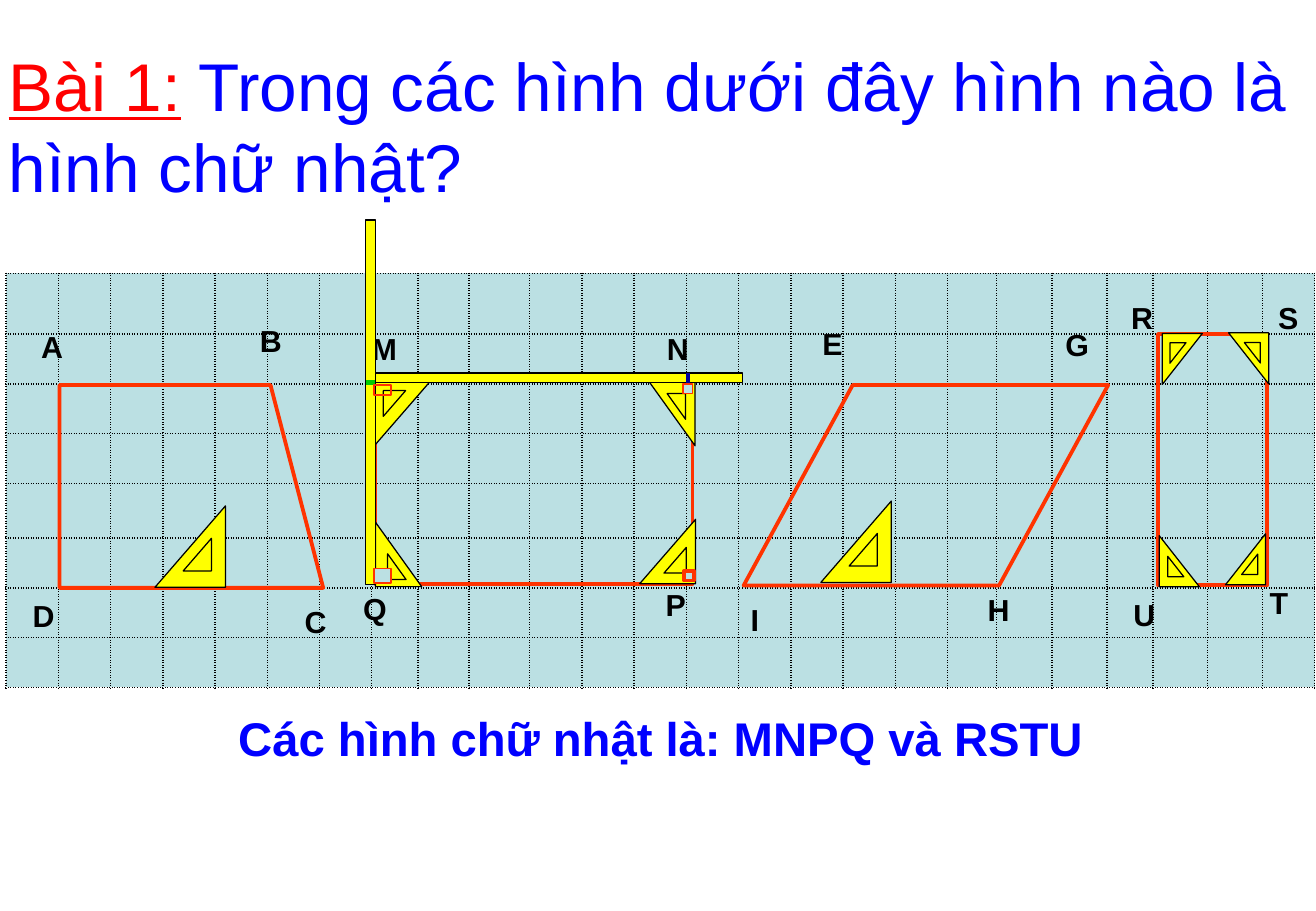
import dataclasses
import itertools

import pptx
import pptx.dml.color
import pptx.enum.shapes
import pptx.enum.text
import pptx.oxml
import pptx.oxml.ns
import pptx.util

Inches = pptx.util.Inches
Shape = pptx.enum.shapes.MSO_SHAPE
Align = pptx.enum.text.PP_ALIGN
Anchor = pptx.enum.text.MSO_ANCHOR
AutoSize = pptx.enum.text.MSO_AUTO_SIZE


@dataclasses.dataclass(frozen=True)
class Theme:
    font: str = "Arial"
    grid: str = "BBE0E3"
    outline: str = "FF3300"
    tool: str = "FFFF00"
    ink: str = "000000"
    question: str = "0000FF"
    exercise: str = "FF0000"
    tick: str = "000099"
    origin: str = "00CC00"
    title_size: int = 40
    answer_size: int = 28
    label_size: int = 18
    hairline: float = 0.75
    thin: float = 1
    bold_line: float = 2.25


def rgb(color):
    return pptx.dml.color.RGBColor.from_string(color)


def apply_format(target, values):
    for name, value in values.items():
        setattr(target, name, value)


class GeometrySlide:
    def __init__(self, presentation, theme):
        self.theme = theme
        self.slide = presentation.slides.add_slide(presentation.slide_layouts[5])
        self.shapes = self.slide.shapes

    def fill_text(self, frame, runs, size, align=Align.LEFT, **frame_format):
        apply_format(frame, {"word_wrap": True, **frame_format})
        paragraph = frame.paragraphs[0]
        paragraph.alignment = align
        for text, color, font_format in runs:
            run = paragraph.add_run()
            run.text = text
            apply_format(run.font, {"name": self.theme.font, "size": pptx.util.Pt(size),
                                    **font_format})
            run.font.color.rgb = rgb(color)

    def title(self, box, runs):
        title = self.shapes.title
        apply_format(title, dict(zip(("left", "top", "width", "height"), map(Inches, box))))
        self.fill_text(title.text_frame, runs, self.theme.title_size,
                       vertical_anchor=Anchor.MIDDLE, auto_size=AutoSize.NONE)

    def text(self, box, text, color, size, align=Align.LEFT, **frame_format):
        frame = self.shapes.add_textbox(*map(Inches, box)).text_frame
        self.fill_text(frame, [(text, color, {"bold": True})], size, align, **frame_format)

    def shape(self, kind, box, fill=None, line=None, width=None, rotation=0):
        shape = self.shapes.add_shape(kind, *map(Inches, box))
        shape.rotation = rotation
        shape.shadow.inherit = False
        if fill:
            shape.fill.solid()
            shape.fill.fore_color.rgb = rgb(fill)
        else:
            shape.fill.background()
        shape.line.color.rgb = rgb(line or self.theme.outline)
        shape.line.width = pptx.util.Pt(width or self.theme.bold_line)
        return shape

    def tool(self, kind, box, rotation=0):
        self.shape(kind, box, self.theme.tool, self.theme.ink, self.theme.hairline, rotation)

    def set_square(self, left, top, width, height, rotation, hole_left, hole_top):
        """A drafting triangle whose inner triangle is 0.4 of its size."""
        for box in ((left, top, width, height),
                    (hole_left, hole_top, 0.4 * width, 0.4 * height)):
            self.tool(Shape.RIGHT_TRIANGLE, box, rotation)

    def line(self, start, end, color, width):
        line = self.shapes.add_connector(
            pptx.enum.shapes.MSO_CONNECTOR.STRAIGHT, *map(Inches, (*start, *end)))
        line.line.color.rgb = rgb(color)
        line.line.width = pptx.util.Pt(width)
        line._element.spPr.append(pptx.oxml.parse_xml(
            f'<a:effectLst {pptx.oxml.ns.nsdecls("a")}/>'))

    def grid(self, left, top, columns, rows):
        table = self.shapes.add_table(
            len(rows), len(columns),
            *map(Inches, (left, top, sum(columns), sum(rows)))).table
        apply_format(table, {"first_row": False, "horz_banding": False})
        for column, width in zip(table.columns, columns):
            column.width = Inches(width)
        for row, height in zip(table.rows, rows):
            row.height = Inches(height)
        for cell in table.iter_cells():
            for side in "LRTB":
                cell._tc.get_or_add_tcPr().append(pptx.oxml.parse_xml(
                    f'<a:ln{side} {pptx.oxml.ns.nsdecls("a")} w="12700"><a:solidFill>'
                    f'<a:srgbClr val="{self.theme.ink}"/></a:solidFill>'
                    f'<a:prstDash val="sysDot"/></a:ln{side}>'))
            cell.fill.solid()
            cell.fill.fore_color.rgb = rgb(self.theme.grid)


def main():
    presentation = pptx.Presentation()
    apply_format(presentation, {"slide_width": Inches(10.83), "slide_height": Inches(7.5)})
    theme = Theme()
    page = GeometrySlide(presentation, theme)

    # Question
    page.title((-0.03, 0.44, 10.83, 1.17), [
        ("Bài 1:", theme.exercise, {"underline": True}),
        (" Trong các hình dưới đây hình nào là hình chữ nhật?", theme.question, {}),
    ])

    # Squared paper
    columns = ([0.43] * 7 + [0.38, 0.42, 0.5] + [0.43] * 8
               + [0.4, 0.46, 0.45, 0.38, 0.45, 0.45, 0.43])
    page.grid(0.05, 2.25, columns, [0.5] + [0.41] * 3 + [0.45] + [0.41] * 3)

    # The four figures: ABCD, MNPQ, RSTU, EGHI
    page.shape(Shape.FLOWCHART_MANUAL_INPUT, (0.74, 2.92, 1.67, 2.17), rotation=90)
    page.shape(Shape.RECTANGLE, (3.09, 3.14, 2.61, 1.67))
    page.shape(Shape.RECTANGLE, (9.53, 2.75, 0.9, 2.07))
    page.shape(Shape.PARALLELOGRAM, (6.12, 3.17, 3, 1.65)).adjustments[0] = 0.544

    # Set squares on ABCD and MNPQ
    for square in (
        (1.23, 4.21, 0.67, 0.58, 270, 1.49, 4.45),
        (3.05, 3.17, 0.53, 0.46, 90, 3.14, 3.23),
        (5.34, 3.14, 0.38, 0.53, 180, 5.49, 3.24),
        (3.09, 4.3, 0.38, 0.53, 0, 3.19, 4.56),
        (5.23, 4.31, 0.53, 0.46, 270, 5.45, 4.52),
    ):
        page.set_square(*square)

    # Right-angle marks in the corners of RSTU
    for (edge_x, x), (edge_y, y) in itertools.product(
            ((9.56, 9.63), (10.42, 10.34)), ((2.76, 2.84), (4.81, 4.73))):
        page.line((x, edge_y), (x, y), theme.outline, theme.bold_line)
        page.line((edge_x, y), (x, y), theme.outline, theme.bold_line)

    # Vertex letters
    vertices = {
        "A": (0.24, 2.65), "B": (2.04, 2.6), "C": (2.41, 4.92), "D": (0.17, 4.87),
        "M": (2.96, 2.67), "N": (5.39, 2.67), "P": (5.38, 4.78), "Q": (2.89, 4.81),
        "E": (6.67, 2.63), "G": (8.67, 2.64), "H": (8.03, 4.82), "I": (6.08, 4.9),
        "R": (9.21, 2.41), "S": (10.42, 2.41), "T": (10.35, 4.76), "U": (9.23, 4.86),
    }
    for letter, corner in vertices.items():
        page.text((*corner, 0.5, 0.4), letter, theme.ink, theme.label_size,
                  auto_size=AutoSize.SHAPE_TO_FIT_TEXT)

    # Rulers along MN and MQ
    page.tool(Shape.RECTANGLE, (3.03, 3.07, 3.08, 0.08))
    page.line((5.66, 3.07), (5.66, 3.15), theme.tick, theme.bold_line)
    page.tool(Shape.RECTANGLE, (1.55, 3.27, 3, 0.08), 270)
    page.line((3.09, 3.15), (3.01, 3.15), theme.origin, 3)

    # Right-angle marks in the corners of MNPQ
    for box, fill, width in (
        ((3.08, 3.17, 0.14, 0.08), None, theme.thin),
        ((5.62, 3.16, 0.08, 0.08), theme.grid, theme.thin),
        ((3.08, 4.68, 0.14, 0.12), theme.grid, theme.thin),
        ((5.63, 4.7, 0.08, 0.08), theme.grid, theme.bold_line),
    ):
        page.shape(Shape.RECTANGLE, box, fill, width=width)

    # Answer
    page.text((1.02, 5.7, 8.83, 0.75), "Các hình chữ nhật là: MNPQ và RSTU",
              theme.question, theme.answer_size, Align.CENTER,
              vertical_anchor=Anchor.MIDDLE)

    # Set squares on EGHI and RSTU
    for square in (
        (6.71, 4.17, 0.67, 0.58, 270, 6.97, 4.41),
        (10.04, 4.44, 0.42, 0.33, 270, 10.2, 4.58),
        (9.52, 2.79, 0.42, 0.33, 90, 9.61, 2.84),
        (9.54, 4.41, 0.33, 0.42, 0, 9.61, 4.58),
        (10.11, 2.74, 0.33, 0.42, 180, 10.24, 2.82),
    ):
        page.set_square(*square)

    presentation.save("out.pptx")


if __name__ == "__main__":
    main()
